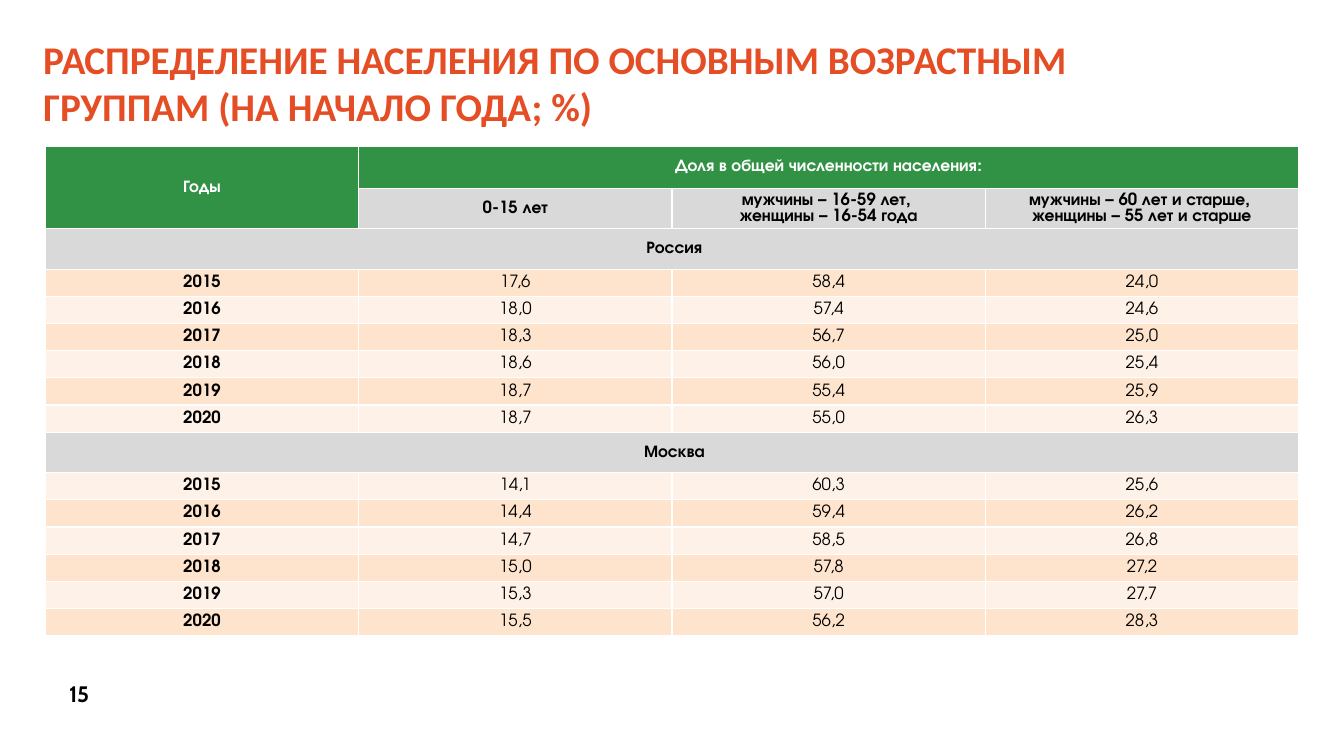
from lxml import etree
from pptx import Presentation
from pptx.dml.color import RGBColor
from pptx.enum.text import MSO_ANCHOR, PP_ALIGN
from pptx.oxml.ns import qn
from pptx.util import Inches, Pt

ORANGE = RGBColor(0xE5, 0x4D, 0x25)
GREEN = RGBColor(0x31, 0x91, 0x44)
GREY = RGBColor(0xD9, 0xD9, 0xD9)
PEACH = RGBColor(0xFE, 0xE4, 0xCD)
LIGHT_PEACH = RGBColor(0xFE, 0xF2, 0xE8)
WHITE = RGBColor(0xFF, 0xFF, 0xFF)
BLACK = RGBColor(0, 0, 0)

TABLE_FONT = "TeX Gyre Adventor"
YEARS = range(2015, 2021)
AGE_GROUPS = [
    "0-15 лет",
    "мужчины – 16-59 лет, \nженщины – 16-54 года",
    "мужчины – 60 лет и старше, \nженщины – 55 лет и старше",
]
# Region, its first and second band colours, and one row of shares per year
REGIONS = [
    (" Россия", (PEACH, LIGHT_PEACH), [
        ("17,6", "58,4", "24,0"),
        ("18,0", "57,4", "24,6"),
        ("18,3", "56,7", "25,0"),
        ("18,6", "56,0", "25,4"),
        ("18,7", "55,4", "25,9"),
        ("18,7", "55,0", "26,3"),
    ]),
    (" Москва", (LIGHT_PEACH, PEACH), [
        ("14,1", "60,3", "25,6"),
        ("14,4", "59,4", "26,2"),
        ("14,7", "58,5", "26,8"),
        ("15,0", "57,8", "27,2"),
        ("15,3", "57,0", "27,7"),
        ("15,5", "56,2", "28,3"),
    ]),
]
HEADER_HEIGHT, BAND_HEIGHT, YEAR_HEIGHT = 0.42, 0.4, 0.27


def format_text(text_frame, font_name, size, color, bold=True, align=PP_ALIGN.CENTER):
    for paragraph in text_frame.paragraphs:
        paragraph.alignment = align
        for run in paragraph.runs:
            run.font.name = font_name
            run.font.size = Pt(size)
            run.font.bold = bold
            run.font.color.rgb = color


def add_text(slide, box, text, font_name, size, color, align):
    shape = slide.shapes.add_textbox(*(Inches(length) for length in box))
    shape.text_frame.word_wrap = True
    shape.text_frame.text = text
    format_text(shape.text_frame, font_name, size, color, align=align)


def add_borders(cell):
    properties = cell._tc.get_or_add_tcPr()
    for index, side in enumerate(("lnL", "lnR", "lnT", "lnB")):
        line = etree.Element(qn(f"a:{side}"), w=str(Pt(1)))
        fill = etree.SubElement(line, qn("a:solidFill"))
        etree.SubElement(fill, qn("a:srgbClr"), val=str(WHITE))
        properties.insert(index, line)


def fill_cell(cell, text, fill, color=BLACK, bold=True):
    cell.text_frame.text = text
    cell.vertical_anchor = MSO_ANCHOR.MIDDLE
    cell.margin_left = cell.margin_right = Inches(0.04)
    cell.margin_top = cell.margin_bottom = 0
    format_text(cell.text_frame, TABLE_FONT, 12, color, bold)
    cell.fill.solid()
    cell.fill.fore_color.rgb = fill


def add_population_table(slide, left, top, width):
    heights = [HEADER_HEIGHT, BAND_HEIGHT]
    for _ in REGIONS:
        heights += [BAND_HEIGHT] + [YEAR_HEIGHT] * len(YEARS)
    column_count = 1 + len(AGE_GROUPS)
    table = slide.shapes.add_table(
        len(heights), column_count,
        Inches(left), Inches(top), Inches(width), Inches(sum(heights)),
    ).table
    for row, height in zip(table.rows, heights):
        row.height = Inches(height)
    for cell in table.iter_cells():
        add_borders(cell)

    table.cell(0, 0).merge(table.cell(1, 0))
    fill_cell(table.cell(0, 0), "Годы", GREEN, WHITE)
    table.cell(0, 1).merge(table.cell(0, column_count - 1))
    fill_cell(table.cell(0, 1), "Доля в общей численности населения:", GREEN, WHITE)
    for column, age_group in enumerate(AGE_GROUPS, start=1):
        fill_cell(table.cell(1, column), age_group, GREY)

    row = 2
    for region, bands, shares_by_year in REGIONS:
        table.cell(row, 0).merge(table.cell(row, column_count - 1))
        fill_cell(table.cell(row, 0), region, GREY)
        row += 1
        for index, (year, shares) in enumerate(zip(YEARS, shares_by_year)):
            band = bands[index % 2]
            fill_cell(table.cell(row, 0), str(year), band)
            for column, share in enumerate(shares, start=1):
                fill_cell(table.cell(row, column), share, band, bold=False)
            row += 1


def main():
    presentation = Presentation()
    presentation.slide_width = Inches(13.33)
    presentation.slide_height = Inches(7.5)
    slide = presentation.slides.add_slide(presentation.slide_layouts[6])
    add_text(slide, (0.51, 6.7, 0.55, 0.37), "15", "Cabin", 16, BLACK, PP_ALIGN.CENTER)
    add_text(
        slide, (0.33, 0.3, 10.45, 1.04),
        "РАСПРЕДЕЛЕНИЕ НАСЕЛЕНИЯ ПО ОСНОВНЫМ ВОЗРАСТНЫМ ГРУППАМ (НА НАЧАЛО ГОДА; %)",
        "Calibri", 28, ORANGE, PP_ALIGN.LEFT,
    )
    add_population_table(slide, 0.45, 1.45, 12.43)
    presentation.save("out.pptx")


if __name__ == "__main__":
    main()
